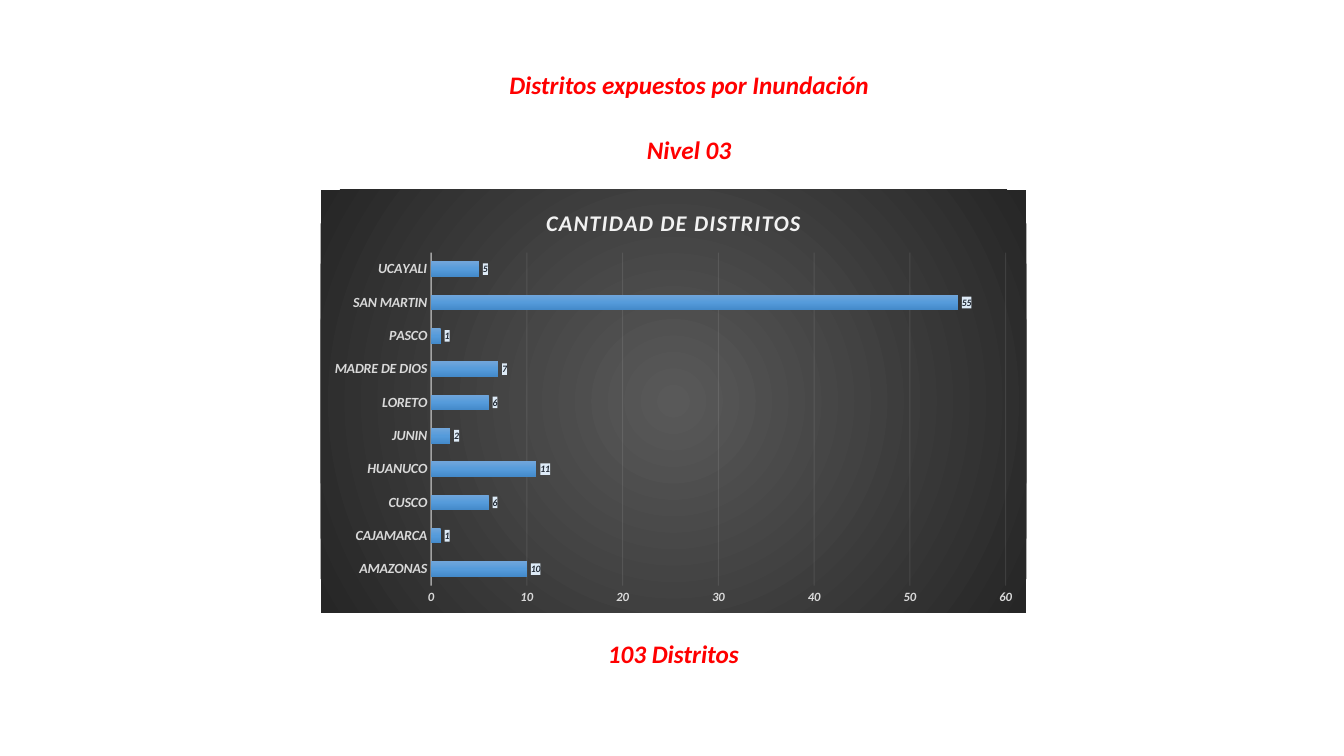
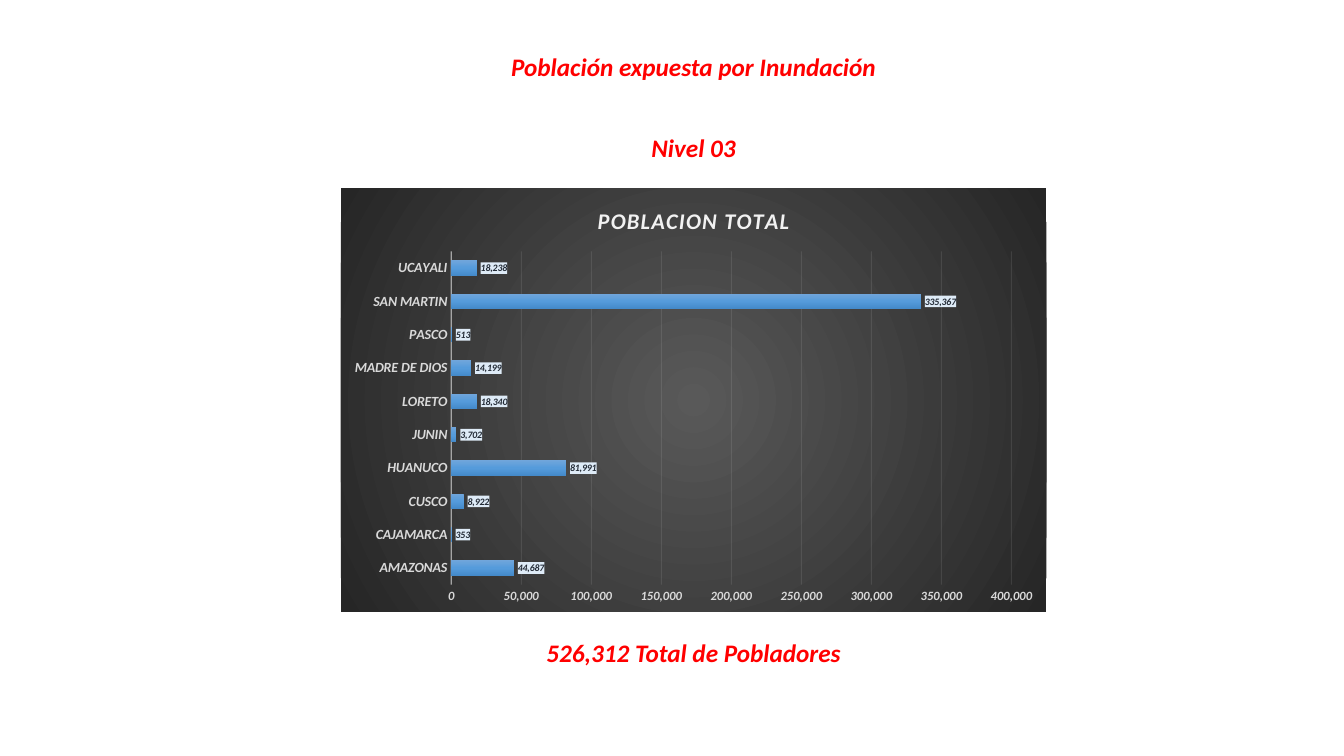
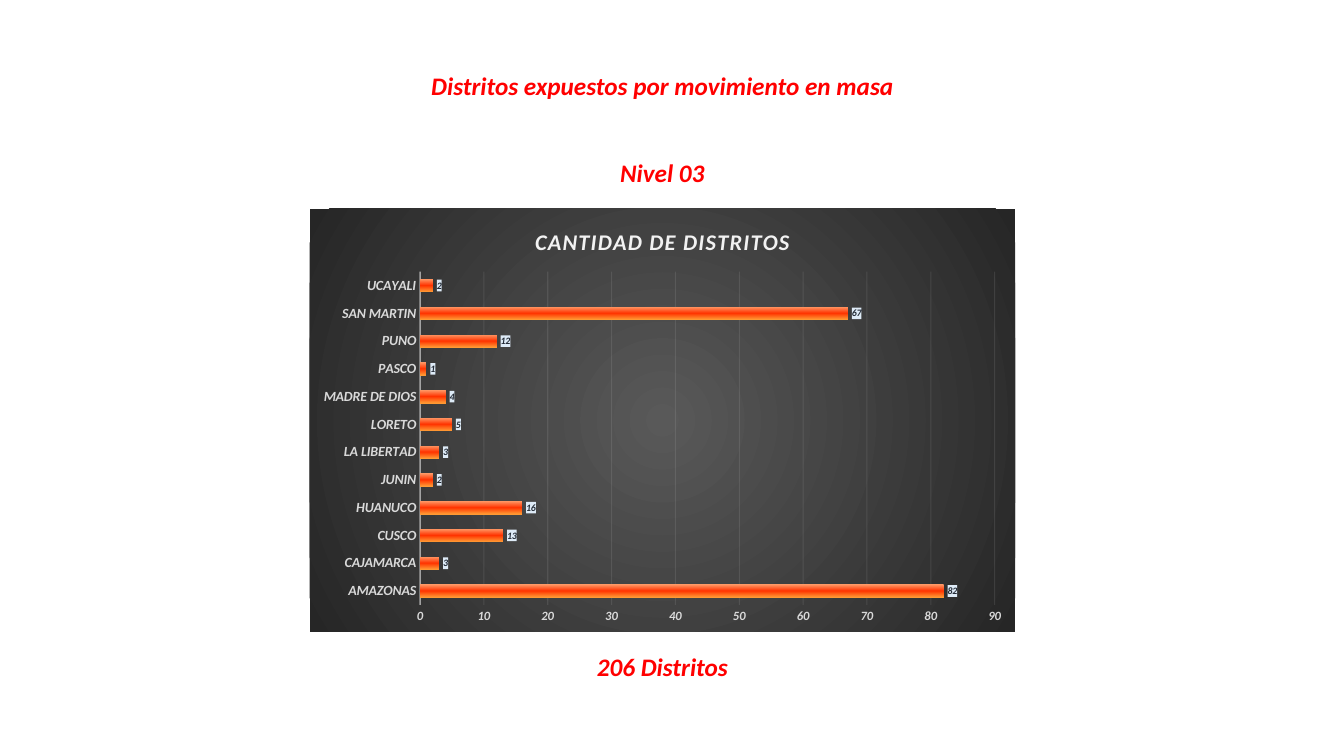
from dataclasses import dataclass

import lxml.etree
import pptx
import pptx.chart.data
import pptx.dml.color
import pptx.enum.chart
import pptx.enum.text
import pptx.oxml
import pptx.oxml.ns
import pptx.util

COLORS = {
    "heading": "FF0000",
    "chart_title": "F2F2F2",
    "axis_text": "D9D9D9",
    "line": "F2F2F2",
    "label_text": "222A35",
    "label_fill": "DEEBF7",
    "panel_center": "595959",
    "panel_edge": "262626",
}
BLUE = ("71A6DB", "559BDB", "448ACA")
ORANGE = ("FF9966", "FF3300", "FF9933")
FONT = "Calibri"
NUMBER_FORMAT = "#,##0"
WIDTH, HEIGHT = pptx.util.Inches(13.33), pptx.util.Inches(7.5)
CHART_WIDTH, CHART_HEIGHT, TEXT_HEIGHT = 52.5, 56, 5.33
LINEAR = '<a:lin ang="5400000" scaled="0"/>'
RADIAL = ('<a:path path="circle">'
          '<a:fillToRect l="50000" t="50000" r="50000" b="50000"/></a:path>')
NS = pptx.oxml.ns.nsdecls("a", "c")


@dataclass(frozen=True)
class Caption:
    text: str
    center: float
    top: float
    width: float
    wrap: bool = True


@dataclass(frozen=True)
class BarPanel:
    title: str
    center: float
    top: float
    values: dict[str, int]
    gradient: tuple[str, ...]


@dataclass(frozen=True)
class Page:
    captions: tuple[Caption, ...]
    panel: BarPanel


PAGES = (
    Page(
        (Caption("Distritos expuestos por Inundación", 51.28, 8.53, 28.58, False),
         Caption("103 Distritos", 50.11, 83.73, 11.63),
         Caption("Nivel 03", 51.28, 17.07, 12.83)),
        BarPanel("CANTIDAD DE DISTRITOS", 50.11, 25.07, {
            "AMAZONAS": 10, "CAJAMARCA": 1, "CUSCO": 6, "HUANUCO": 11,
            "JUNIN": 2, "LORETO": 6, "MADRE DE DIOS": 7, "PASCO": 1,
            "SAN MARTIN": 55, "UCAYALI": 5}, BLUE),
    ),
    Page(
        (Caption("Población expuesta por Inundación", 51.61, 6.13, 28.96, False),
         Caption("526,312 Total de Pobladores", 51.61, 83.6, 25.13),
         Caption("Nivel 03", 51.61, 16.8, 8.1)),
        BarPanel("POBLACION TOTAL", 51.61, 24.93, {
            "AMAZONAS": 44687, "CAJAMARCA": 353, "CUSCO": 8922,
            "HUANUCO": 81991, "JUNIN": 3702, "LORETO": 18340,
            "MADRE DE DIOS": 14199, "PASCO": 513, "SAN MARTIN": 335367,
            "UCAYALI": 18238}, BLUE),
    ),
    Page(
        (Caption("Distritos expuestos por movimiento en masa", 49.29, 8.67, 36.31, False),
         Caption("Nivel 03", 49.29, 20.13, 7.95),
         Caption("206 Distritos", 49.29, 85.47, 11.48)),
        BarPanel("CANTIDAD DE DISTRITOS", 49.29, 27.6, {
            "AMAZONAS": 82, "CAJAMARCA": 3, "CUSCO": 13, "HUANUCO": 16,
            "JUNIN": 2, "LA LIBERTAD": 3, "LORETO": 5, "MADRE DE DIOS": 4,
            "PASCO": 1, "PUNO": 12, "SAN MARTIN": 67, "UCAYALI": 2}, ORANGE),
    ),
)


def rgb(name: str) -> pptx.dml.color.RGBColor:
    return pptx.dml.color.RGBColor.from_string(COLORS[name])


def frame(center: float, top: float, width: float, height: float) -> tuple[int, ...]:
    return (int(WIDTH * (center - width / 2) / 100), int(HEIGHT * top / 100),
            int(WIDTH * width / 100), int(HEIGHT * height / 100))


def style_font(font, size: float, color: str) -> None:
    font.name = FONT
    font.size = pptx.util.Pt(size)
    font.bold = True
    font.italic = True
    font.color.rgb = rgb(color)


def style_line(line, width: float, alpha: int) -> None:
    line.width = pptx.util.Pt(width)
    line.color.rgb = rgb("line")
    color = line._get_or_add_ln().find(".//" + pptx.oxml.ns.qn("a:srgbClr"))
    lxml.etree.SubElement(color, pptx.oxml.ns.qn("a:alpha"), val=str(alpha * 1000))


def gradient_fill(colors: tuple[str, ...], direction: str):
    stops = "".join(
        f'<a:gs pos="{100000 * i // (len(colors) - 1)}"><a:srgbClr val="{c}"/></a:gs>'
        for i, c in enumerate(colors))
    return pptx.oxml.parse_xml(
        f'<a:gradFill {NS} rotWithShape="1"><a:gsLst>{stops}</a:gsLst>{direction}</a:gradFill>')


def shape_properties(fill):
    sp_pr = pptx.oxml.parse_xml(f'<c:spPr {NS}><a:ln><a:noFill/></a:ln></c:spPr>')
    sp_pr.insert(0, fill)
    return sp_pr


def add_caption(s, caption: Caption) -> None:
    sp = s.shapes.add_textbox(
        *frame(caption.center, caption.top, caption.width, TEXT_HEIGHT))
    tf = sp.text_frame
    tf.word_wrap = caption.wrap
    tf.auto_size = pptx.enum.text.MSO_AUTO_SIZE.SHAPE_TO_FIT_TEXT
    p = tf.paragraphs[0]
    p.alignment = pptx.enum.text.PP_ALIGN.CENTER
    r = p.add_run()
    r.text = caption.text
    style_font(r.font, 18, "heading")


def add_title(chart, text: str) -> None:
    chart.has_title = True
    r = chart.chart_title.text_frame.paragraphs[0].add_run()
    r.text = text
    style_font(r.font, 16, "chart_title")
    r.font._element.set("spc", "100")
    chart.chart_title.include_in_layout = False


def style_axes(chart) -> None:
    for axis, size in ((chart.category_axis, 10), (chart.value_axis, 9)):
        axis.major_tick_mark = pptx.enum.chart.XL_TICK_MARK.NONE
        axis.minor_tick_mark = pptx.enum.chart.XL_TICK_MARK.NONE
        style_font(axis.tick_labels.font, size, "axis_text")
    style_line(chart.category_axis.format.line, 1, 54)
    axis = chart.value_axis
    axis.format.line.fill.background()
    axis.tick_labels.number_format = NUMBER_FORMAT
    axis.tick_labels.number_format_is_linked = False
    axis.has_major_gridlines = True
    style_line(axis.major_gridlines.format.line, 0.75, 10)


def style_bars(plot, gradient: tuple[str, ...]) -> None:
    plot.gap_width = 115
    plot.overlap = -20
    plot.vary_by_categories = False
    series = plot.series[0]
    series.invert_if_negative = False
    series._element.get_or_add_spPr().insert(0, gradient_fill(gradient, LINEAR))
    labels = series.data_labels
    labels.show_value = True
    labels.position = pptx.enum.chart.XL_LABEL_POSITION.OUTSIDE_END
    labels.number_format = NUMBER_FORMAT
    labels.number_format_is_linked = False
    style_font(labels.font, 7, "label_text")
    fill = pptx.oxml.parse_xml(
        f'<a:solidFill {NS}><a:srgbClr val="{COLORS["label_fill"]}"/></a:solidFill>')
    text = labels._element.find(pptx.oxml.ns.qn("c:txPr"))
    text.addprevious(shape_properties(fill))


def add_bar_panel(s, panel: BarPanel) -> None:
    data = pptx.chart.data.CategoryChartData(number_format=NUMBER_FORMAT)
    data.categories = list(panel.values)
    data.add_series("Series 1", list(panel.values.values()))
    chart = s.shapes.add_chart(
        pptx.enum.chart.XL_CHART_TYPE.BAR_CLUSTERED,
        *frame(panel.center, panel.top, CHART_WIDTH, CHART_HEIGHT), data).chart
    chart.has_legend = False
    chart.font.name = FONT
    chart.font.size = pptx.util.Pt(10)
    background = gradient_fill((COLORS["panel_center"], COLORS["panel_edge"]), RADIAL)
    text = chart._chartSpace.find(pptx.oxml.ns.qn("c:txPr"))
    text.addprevious(shape_properties(background))
    add_title(chart, panel.title)
    style_axes(chart)
    style_bars(chart.plots[0], panel.gradient)


def main() -> None:
    prs = pptx.Presentation()
    prs.slide_width, prs.slide_height = WIDTH, HEIGHT
    for page in PAGES:
        s = prs.slides.add_slide(prs.slide_layouts[6])
        for caption in page.captions:
            add_caption(s, caption)
        add_bar_panel(s, page.panel)
    prs.save("out.pptx")


if __name__ == "__main__":
    main()
